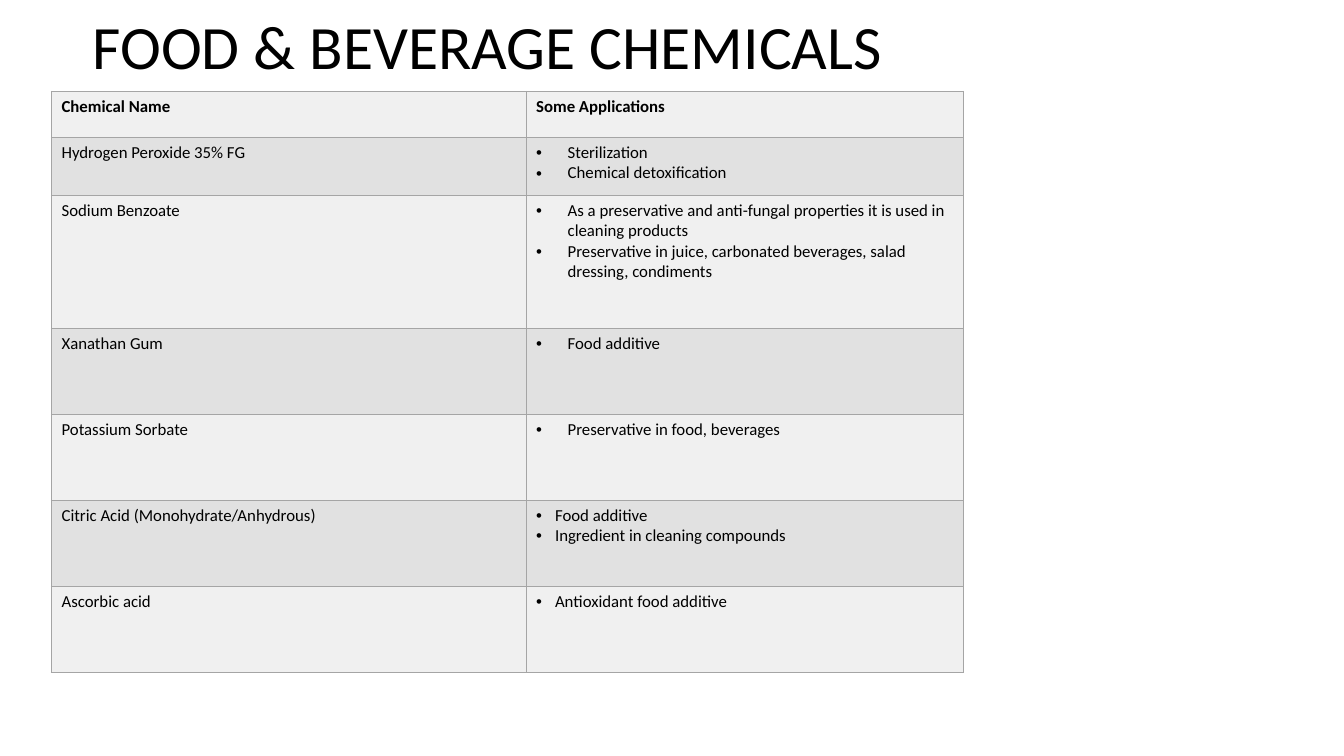
import pptx
import pptx.util
import pptx.dml.color
import pptx.enum.text
import pptx.oxml
import pptx.oxml.ns

Pt = pptx.util.Pt

TITLE = "FOOD & BEVERAGE CHEMICALS"
HEADS = ("Chemical Name", "Some Applications")
WIDE, SLIM = 22.5, 13.5  # bullet indents

# Chemical, applications, bullet indent, row height
ROWS = [
    ("Hydrogen Peroxide 35% FG",
     ["Sterilization", "Chemical detoxification"], WIDE, 41.4),
    ("Sodium Benzoate",
     ["As a preservative and anti-fungal properties it is used in cleaning products",
      "Preservative in juice, carbonated beverages, salad dressing, condiments"],
     WIDE, 95),
    ("Xanathan Gum", ["Food additive"], WIDE, 61.4),
    ("Potassium Sorbate", ["Preservative in food, beverages"], WIDE, 61.4),
    ("Citric Acid (Monohydrate/Anhydrous)",
     ["Food additive", "Ingredient in cleaning compounds"], SLIM, 61.4),
    ("Ascorbic acid", ["Antioxidant food additive"], SLIM, 61.4),
]
HEAD_H = 32.8
COLS = (339, 312.6)
LEFT, TOP = 36.8, 65.4
FONT = "Calibri"
COLORS = {"text": "000000", "light": "F0F0F0", "dark": "E1E1E1", "line": "A5A5A5"}


def color(name):
    return pptx.dml.color.RGBColor.from_string(COLORS[name])


def style(para, size, bold=False):
    font = para.font
    font.name, font.size, font.bold = FONT, Pt(size), bold
    font.color.rgb = color("text")


def add_xml(parent, xml):
    ns = pptx.oxml.ns.nsdecls("a")
    parent.append(pptx.oxml.parse_xml(xml.replace(" ", f" {ns} ", 1)))


def bullet(para, indent):
    props = para._p.get_or_add_pPr()
    props.set("marL", str(Pt(indent)))
    props.set("indent", str(-Pt(indent)))
    add_xml(props, '<a:buFont typeface="Arial"/>')
    add_xml(props, '<a:buChar char="•"/>')


def fill_cell(cell, lines, shade, bold=False, indent=None):
    # Borders come before the fill
    props = cell._tc.get_or_add_tcPr()
    for side in "LRTB":
        add_xml(props, f'<a:ln{side} w="{Pt(1)}"><a:solidFill>'
                       f'<a:srgbClr val="{COLORS["line"]}"/></a:solidFill></a:ln{side}>')
    cell.fill.solid()
    cell.fill.fore_color.rgb = color(shade)
    cell.text = "\n".join(lines)
    for para in cell.text_frame.paragraphs:
        if indent:
            bullet(para, indent)
        style(para, 12, bold)


deck = pptx.Presentation()
deck.slide_width, deck.slide_height = Pt(960), Pt(540)
slide = deck.slides.add_slide(deck.slide_layouts[5])

# Title
title = slide.shapes.title
title.left, title.top, title.width, title.height = Pt(59), Pt(-5.8), Pt(828), Pt(82)
frame = title.text_frame
frame.text = TITLE
frame.word_wrap = True
frame.auto_size = pptx.enum.text.MSO_AUTO_SIZE.NONE
frame.vertical_anchor = pptx.enum.text.MSO_ANCHOR.MIDDLE
head = frame.paragraphs[0]
head.alignment = pptx.enum.text.PP_ALIGN.LEFT
head.line_spacing = 0.9
style(head, 44)

# Table grid
heights = [HEAD_H] + [row[3] for row in ROWS]
table = slide.shapes.add_table(len(heights), len(COLS), Pt(LEFT), Pt(TOP),
                               Pt(sum(COLS)), Pt(sum(heights))).table
for col, width in zip(table.columns, COLS):
    col.width = Pt(width)
for row, height in zip(table.rows, heights):
    row.height = Pt(height)

# Table content
for i, text in enumerate(HEADS):
    fill_cell(table.cell(0, i), [text], "light", bold=True)
for i, (name, uses, indent, _) in enumerate(ROWS, 1):
    shade = "dark" if i % 2 else "light"
    fill_cell(table.cell(i, 0), [name], shade)
    fill_cell(table.cell(i, 1), uses, shade, indent=indent)

deck.save("out.pptx")
